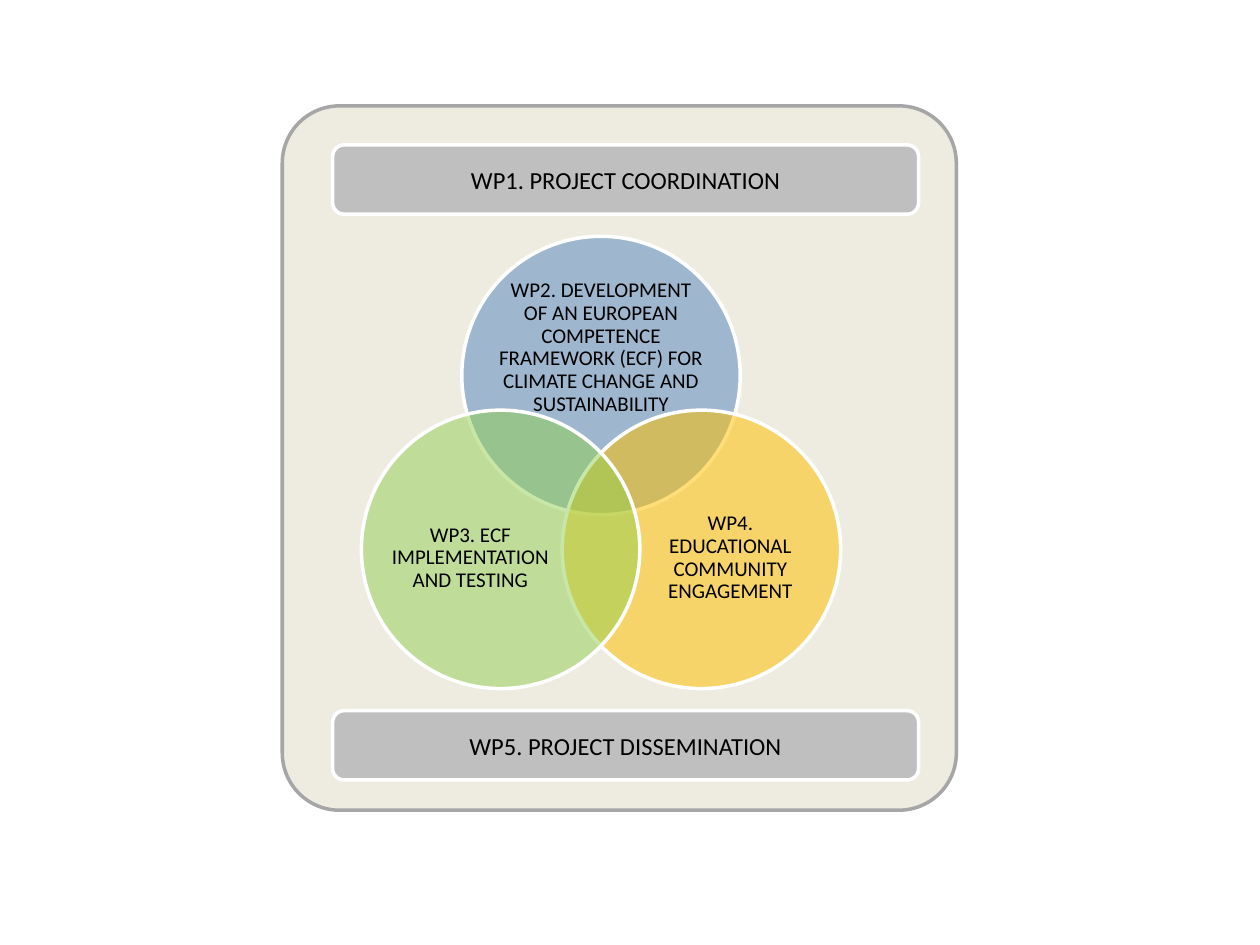
from math import cos, radians, sin

from lxml import etree
from pptx import Presentation
from pptx.dml.color import RGBColor
from pptx.enum.shapes import MSO_SHAPE
from pptx.enum.text import MSO_ANCHOR, PP_ALIGN
from pptx.oxml.ns import qn
from pptx.util import Inches, Pt

ROUNDED, OVAL = MSO_SHAPE.ROUNDED_RECTANGLE, MSO_SHAPE.OVAL
MIDDLE, CENTER = MSO_ANCHOR.MIDDLE, PP_ALIGN.CENTER

FONT = "Calibri"
COLORS = {
    "panel": "EEECE1", "panel_line": "A6A6A6", "bar": "BFBFBF",
    "white": "FFFFFF", "text": "000000",
    "blue": "4F81BD", "amber": "FFC000", "green": "92D050",
}

PANEL = (2.24, 0.84, 5.35, 5.59)
BAR_LEFT, BAR_W, BAR_H = 2.64, 4.65, 0.55
BARS = [("WP1. PROJECT COORDINATION", 1.15), ("WP5. PROJECT DISSEMINATION", 5.64)]

# Venn circles sit at equal angles around one centre
VENN_X, VENN_Y, VENN_R = 4.77, 3.9, 0.92
DIAMETER = 2.21
# text, colour, opacity %, angle, label offset from circle centre, label size
CIRCLES = [
    ("WP2. DEVELOPMENT OF AN EUROPEAN COMPETENCE FRAMEWORK (ECF) "
     "FOR CLIMATE CHANGE AND SUSTAINABILITY",
     "blue", 50, -90, (0, -0.22), (1.62, 0.99)),
    ("WP4. EDUCATIONAL COMMUNITY ENGAGEMENT",
     "amber", 53, 30, (0.23, 0.07), (1.32, 1.21)),
    ("WP3. ECF IMPLEMENTATION AND TESTING",
     "green", 50, 150, (-0.24, 0.07), (1.32, 1.21)),
]


def rgb(name):
    return RGBColor.from_string(COLORS[name])


def box_around(cx, cy, w, h):
    return cx - w / 2, cy - h / 2, w, h


def add_shape(shapes, kind, box, fill, line="white", opacity=None):
    sp = shapes.add_shape(kind, *map(Inches, box))
    sp.shadow.inherit = False
    sp.fill.solid()
    sp.fill.fore_color.rgb = rgb(fill)
    sp.line.color.rgb = rgb(line)
    sp.line.width = Pt(2)
    if opacity is not None:
        color = sp.fill._xPr.find(qn("a:solidFill"))[0]
        etree.SubElement(color, qn("a:alpha")).set("val", str(opacity * 1000))
    return sp


def write(sp, text, size):
    tf = sp.text_frame
    tf.word_wrap = True
    tf.vertical_anchor = MIDDLE
    p = tf.paragraphs[0]
    p.alignment = CENTER
    r = p.add_run()
    r.text = text
    r.font.name, r.font.size = FONT, Pt(size)
    r.font.color.rgb = rgb("text")
    return tf


def add_label(shapes, box, text):
    tf = write(shapes.add_textbox(*map(Inches, box)), text, 12)
    tf.margin_left = tf.margin_right = tf.margin_top = tf.margin_bottom = 0
    tf.paragraphs[0].line_spacing = 0.9


prs = Presentation()
prs.slide_width, prs.slide_height = Inches(10), Inches(7.5)
s = prs.slides.add_slide(prs.slide_layouts[6])

panel = add_shape(s.shapes, ROUNDED, PANEL, "panel", "panel_line")
panel.adjustments[0] = 0.085

venn = s.shapes.add_group_shape().shapes
for text, color, opacity, angle, (dx, dy), size in CIRCLES:
    cx = VENN_X + VENN_R * cos(radians(angle))
    cy = VENN_Y + VENN_R * sin(radians(angle))
    add_shape(venn, OVAL, box_around(cx, cy, DIAMETER, DIAMETER), color, opacity=opacity)
    add_label(venn, box_around(cx + dx, cy + dy, *size), text)

for text, top in BARS:
    bar = add_shape(s.shapes, ROUNDED, (BAR_LEFT, top, BAR_W, BAR_H), "bar")
    write(bar, text, 14)

prs.save("out.pptx")
